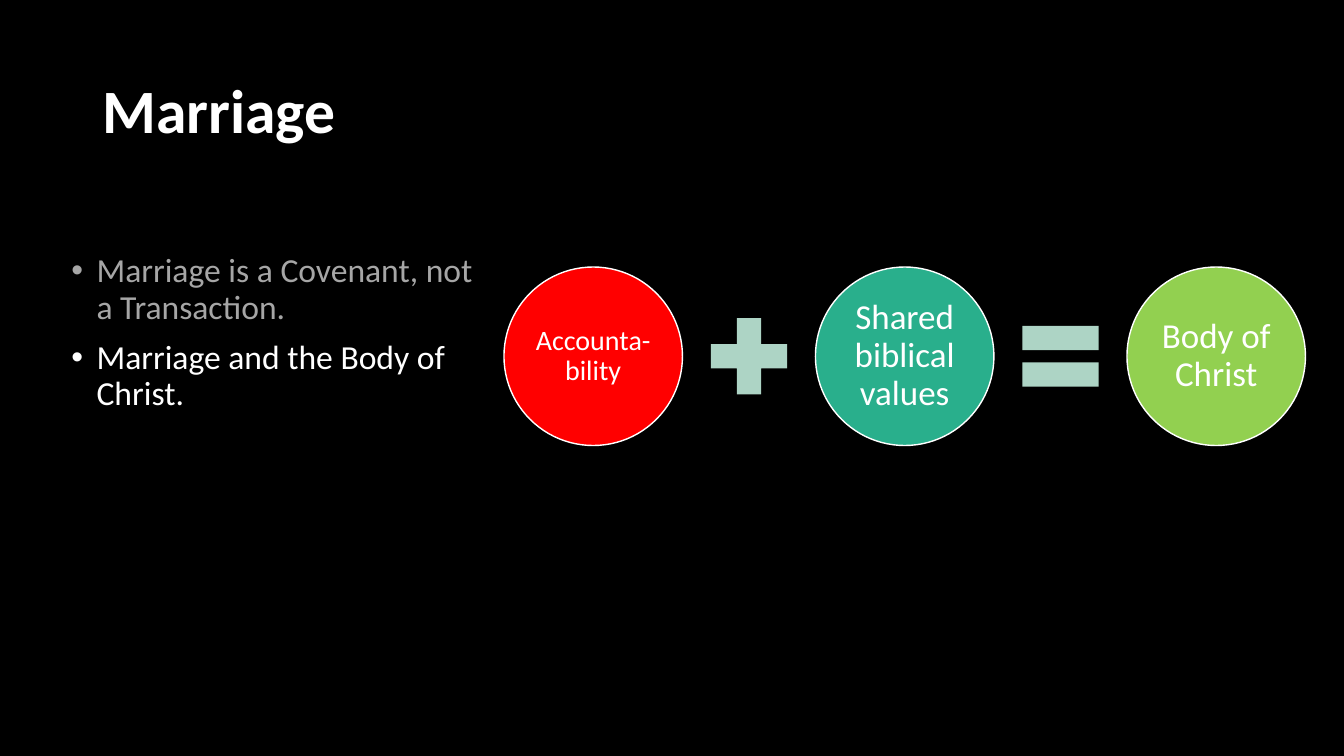
"""Build the Marriage slide: two points beside a sum of three circles."""
from dataclasses import dataclass

from lxml.etree import SubElement
from pptx import Presentation
from pptx.dml.color import RGBColor as Rgb
from pptx.enum.shapes import MSO_SHAPE as Shape
from pptx.enum.text import MSO_ANCHOR as Anchor, PP_ALIGN as Align
from pptx.oxml.ns import qn
from pptx.util import Pt


@dataclass(frozen=True)
class Theme:
    """Colours, font and type sizes of the slide."""
    font: str = "Calibri"
    back: str = "000000"
    text: str = "FFFFFF"
    dim: str = "A6A6A6"
    sign: str = "ADD4C5"
    red: str = "FF0000"
    teal: str = "29AF8C"
    green: str = "92D050"
    title: int = 44
    body: int = 24
    large: int = 25
    small: int = 20


def write(para, text, font, size, color, bold=False, align=Align.LEFT, before=0):
    """Put formatted text into a paragraph."""
    para.alignment = align
    para.line_spacing = 0.9
    para.space_before = Pt(before)
    run = para.add_run()
    run.text = text
    run.font.name = font
    run.font.size = Pt(size)
    run.font.bold = bold
    run.font.color.rgb = Rgb.from_string(color)


class Deck:
    """Hold the theme and the current slide."""

    def __init__(self, theme):
        """Open a blank slide with a plain background."""
        self.theme = theme
        self.file = Presentation()
        self.file.slide_width, self.file.slide_height = Pt(960), Pt(540)
        self.slide = self.file.slides.add_slide(self.file.slide_layouts[6])
        fill = self.slide.background.fill
        fill.solid()
        fill.fore_color.rgb = Rgb.from_string(theme.back)

    def box(self, left, top, width, height):
        """Add a wrapping text box and return its frame."""
        area = map(Pt, (left, top, width, height))
        frame = self.slide.shapes.add_textbox(*area).text_frame
        frame.word_wrap = True
        return frame

    def title(self, text, *area):
        """Add the slide title."""
        frame = self.box(*area)
        frame.vertical_anchor = Anchor.MIDDLE
        look = self.theme
        write(frame.paragraphs[0], text, look.font, look.title, look.text, bold=True)

    def points(self, items, *area):
        """Add a bulleted list of text and colour pairs."""
        frame = self.box(*area)
        for num, (text, color) in enumerate(items):
            para = frame.add_paragraph() if num else frame.paragraphs[0]
            write(para, text, self.theme.font, self.theme.body, color, before=10)
            props = para._p.get_or_add_pPr()
            props.set("marL", str(Pt(18)))
            props.set("indent", str(-Pt(18)))
            SubElement(props, qn("a:buFont")).set("typeface", "Arial")
            SubElement(props, qn("a:buChar")).set("char", "•")

    def shape(self, group, kind, mid, size, color):
        """Add a filled square-framed shape around a centre."""
        left, top = (Pt(pos - size / 2) for pos in mid)
        item = group.shapes.add_shape(kind, left, top, Pt(size), Pt(size))
        item.shadow.inherit = False
        item.fill.solid()
        item.fill.fore_color.rgb = Rgb.from_string(color)
        item.line.fill.background()
        return item

    def disc(self, group, mid, size, color, text, type_size):
        """Add an outlined circle with a centred label."""
        item = self.shape(group, Shape.OVAL, mid, size, color)
        item.line.color.rgb = Rgb.from_string(self.theme.text)
        item.line.width = Pt(1)
        frame = item.text_frame
        frame.word_wrap = True
        frame.vertical_anchor = Anchor.MIDDLE
        frame.margin_left = frame.margin_right = Pt(2)
        frame.margin_top = frame.margin_bottom = Pt(2)
        write(frame.paragraphs[0], text, self.theme.font, type_size,
              self.theme.text, align=Align.CENTER)

    def sum(self, terms, signs, left, mid, size, step):
        """Add circles at an equal step with a sign in each gap."""
        group = self.slide.shapes.add_group_shape()
        for num, term in enumerate(terms):
            across = left + size / 2 + num * step
            self.disc(group, (across, mid), size, *term)
            if num < len(signs):
                self.shape(group, signs[num], (across + step / 2, mid),
                           size * 0.58, self.theme.sign)


def main():
    """Build and save the slide."""
    look = Theme()
    deck = Deck(look)
    deck.title("Marriage", 66, 28.8, 828, 104.4)
    deck.points([("Marriage is a Covenant, not a Transaction.", look.dim),
                 ("Marriage and the Body of Christ.", look.text)],
                43.9, 177.8, 306.7, 129.6)
    deck.sum([(look.red, "Accounta-bility", look.small),
              (look.teal, "Shared biblical values", look.large),
              (look.green, "Body of Christ", look.large)],
             [Shape.MATH_PLUS, Shape.MATH_EQUAL],
             left=360, mid=254.5, size=127.5, step=222.5)
    deck.file.save("out.pptx")


if __name__ == "__main__":
    main()
